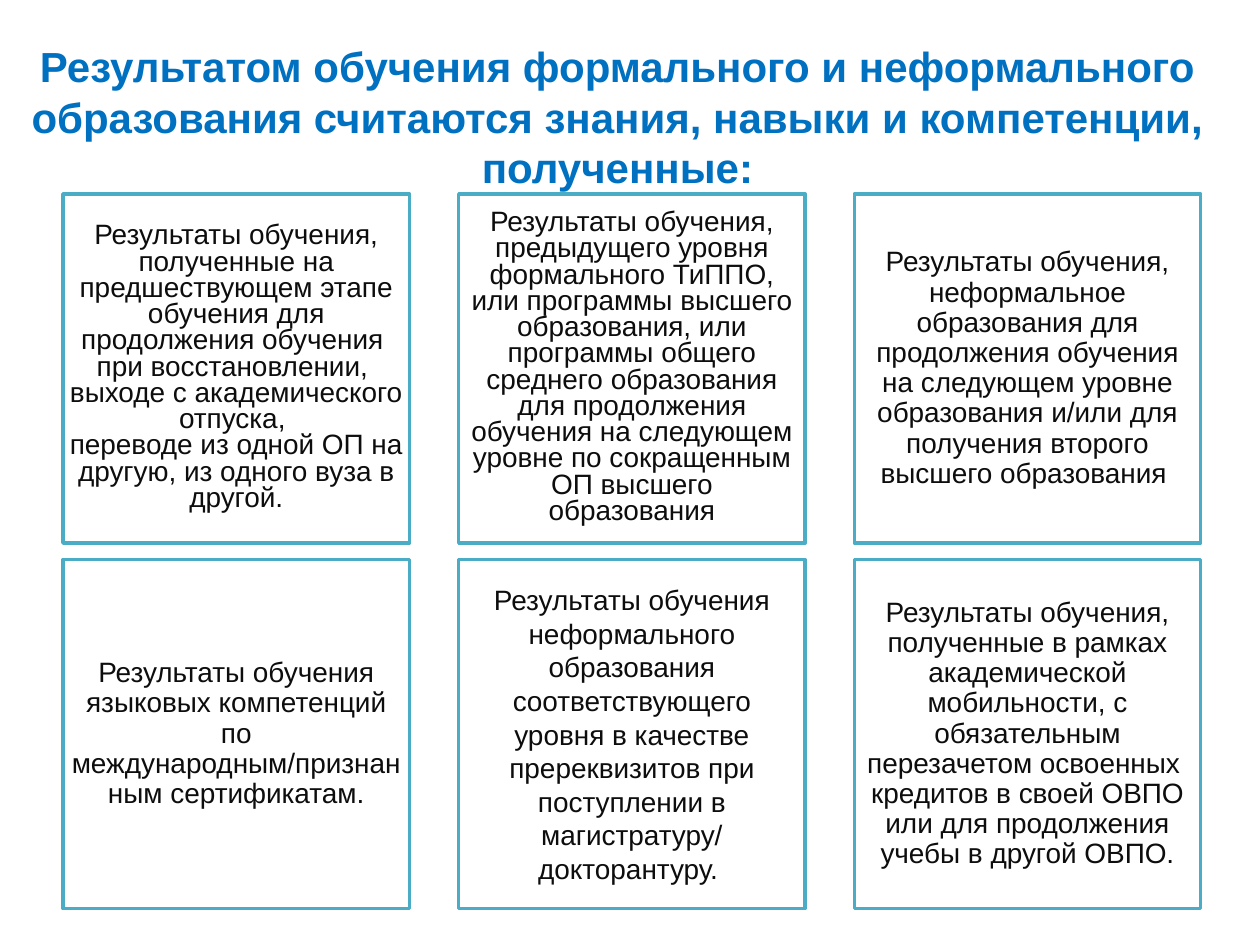
"""Build a slide with a title and a grid of six outlined text cards."""
from pptx import Presentation
from pptx.dml.color import RGBColor
from pptx.enum import shapes, text
from pptx.util import Inches, Pt

BLUE = RGBColor(0x00, 0x70, 0xC0)
TEAL = RGBColor(0x4B, 0xAC, 0xC6)
INK = RGBColor(0x0D, 0x0D, 0x0D)
WHITE = RGBColor(0xFF, 0xFF, 0xFF)

TITLE = ("Результатом обучения формального и неформального образования "
         "считаются знания, навыки и компетенции, полученные:")
LEFT, TOP = 0.5, 1.54
COLUMN_STEP, ROW_STEP = 3.14, 2.9
CARD_WIDTH, CARD_HEIGHT = 2.75, 2.77
EXACT, TIGHT, SINGLE = Pt(15), 0.9, 1.0

CARDS = [
    [
        (EXACT, 0, [
            "Результаты обучения, полученные на предшествующем этапе обучения "
            "для продолжения обучения ",
            "при восстановлении, ",
            "выходе с академического отпуска, ",
            "переводе из одной ОП на другую, из одного вуза в другой.",
        ]),
        (EXACT, 5.6, [
            "Результаты обучения, предыдущего уровня формального ТиППО, или "
            "программы высшего образования, или программы общего среднего "
            "образования для продолжения обучения на следующем уровне по "
            "сокращенным ОП высшего образования",
        ]),
        (TIGHT, 5.6, [
            "Результаты обучения, неформальное образования для продолжения "
            "обучения на следующем уровне образования и/или для получения "
            "второго высшего образования ",
        ]),
    ],
    [
        (TIGHT, 5.6, [
            "Результаты обучения языковых компетенций по "
            "международным/признанным сертификатам.",
        ]),
        (SINGLE, 0, [
            "Результаты обучения неформального образования соответствующего "
            "уровня в качестве пререквизитов при поступлении в магистратуру/",
            "докторантуру. ",
        ]),
        (TIGHT, 5.6, [
            "Результаты обучения, полученные в рамках академической "
            "мобильности, с обязательным перезачетом освоенных  кредитов в "
            "своей ОВПО или для продолжения учебы в другой ОВПО.",
        ]),
    ],
]


class SlideBuilder:
    """Hold the text style and the current slide."""

    def __init__(self, slide, font_name="Arial"):
        self.slide = slide
        self.font_name = font_name

    def style(self, paragraph, size, color, bold=False):
        paragraph.alignment = text.PP_ALIGN.CENTER
        font = paragraph.font
        font.name, font.size, font.bold = self.font_name, Pt(size), bold
        font.color.rgb = color

    def title(self, wording, left, top, width, height):
        shape = self.slide.shapes.title
        shape.left, shape.top = Inches(left), Inches(top)
        shape.width, shape.height = Inches(width), Inches(height)
        frame = shape.text_frame
        frame.text = wording
        frame.word_wrap = True
        frame.auto_size = text.MSO_AUTO_SIZE.NONE
        frame.vertical_anchor = text.MSO_ANCHOR.MIDDLE
        self.style(frame.paragraphs[0], 24, BLUE, bold=True)

    def card(self, left, top, wording, line_spacing, space_after):
        shape = self.slide.shapes.add_shape(
            shapes.MSO_SHAPE.RECTANGLE, Inches(left), Inches(top),
            Inches(CARD_WIDTH), Inches(CARD_HEIGHT))
        shape.shadow.inherit = False
        shape.fill.solid()
        shape.fill.fore_color.rgb = WHITE
        shape.line.color.rgb = TEAL
        shape.line.width = Pt(2)
        frame = shape.text_frame
        frame.word_wrap = True
        frame.vertical_anchor = text.MSO_ANCHOR.MIDDLE
        frame.margin_left = frame.margin_right = Inches(0.05)
        frame.margin_top = frame.margin_bottom = Inches(0.05)
        frame.text = "\n".join(wording)
        for paragraph in frame.paragraphs:
            self.style(paragraph, 16, INK)
            paragraph.line_spacing = line_spacing
            paragraph.space_after = Pt(space_after)


def main():
    presentation = Presentation()
    presentation.slide_width, presentation.slide_height = Inches(10), Inches(7.5)
    slide = presentation.slides.add_slide(presentation.slide_layouts[5])
    builder = SlideBuilder(slide)
    for row, cards in enumerate(CARDS):
        for column, (line_spacing, space_after, wording) in enumerate(cards):
            builder.card(LEFT + column * COLUMN_STEP, TOP + row * ROW_STEP,
                         wording, line_spacing, space_after)
    builder.title(TITLE, 0, 0.3, 9.8, 1.25)
    presentation.save("out.pptx")


if __name__ == "__main__":
    main()
